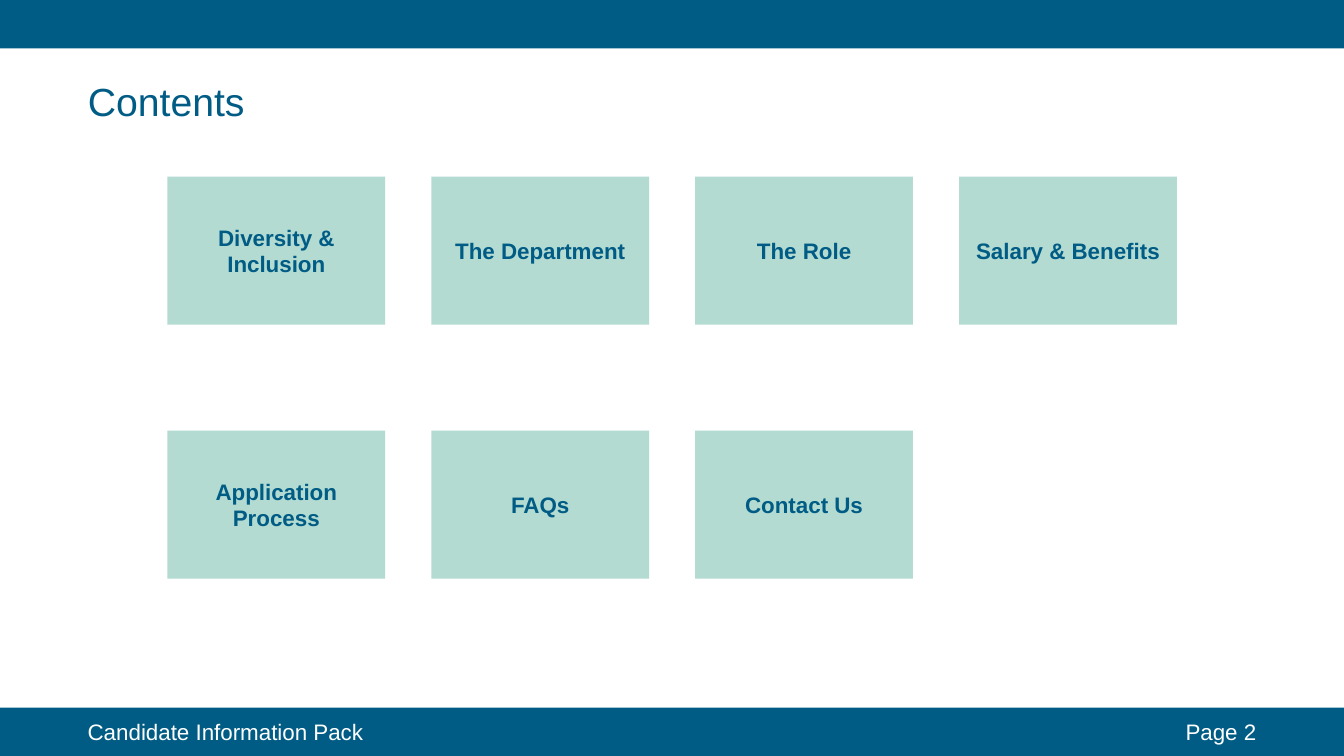
from dataclasses import dataclass

from pptx import Presentation
from pptx import util as u
from pptx.dml.color import RGBColor
from pptx.enum import shapes, text
from pptx.slide import Slide
from pptx.text.text import TextFrame

COLOURS = {"navy": "005C84", "mint": "B3DBD2", "white": "FFFFFF"}
FONT = "Arial"

SLIDE_WIDTH, SLIDE_HEIGHT = 33.87, 19.05
BAR_HEIGHT = 1.22

# Tile grid, in centimetres
GRID_LEFT, GRID_TOP = 4.22, 4.45
TILE_WIDTH, TILE_HEIGHT = 5.49, 3.73
COLUMN_PITCH, ROW_PITCH = 6.65, 6.4

TILE_ROWS = [
    ["Diversity & Inclusion", "The Department", "The Role", "Salary & Benefits"],
    ["Application Process", "FAQs", "Contact Us"],
]


@dataclass(frozen=True)
class Box:
    left: float
    top: float
    width: float
    height: float

    def lengths(self) -> tuple[u.Length, ...]:
        return tuple(u.Cm(n) for n in (self.left, self.top, self.width, self.height))


@dataclass(frozen=True)
class FooterLabel:
    wording: str
    box: Box
    alignment: text.PP_ALIGN


FOOTER_LABELS = [
    FooterLabel("Candidate Information Pack", Box(1.96, 17.96, 8.33, 0.94), text.PP_ALIGN.LEFT),
    FooterLabel("Page 2", Box(28.91, 17.96, 3, 0.94), text.PP_ALIGN.RIGHT),
]


def write_text(frame: TextFrame, wording: str, size: int, colour: str,
               alignment: text.PP_ALIGN, bold: bool = False) -> None:
    paragraph = frame.paragraphs[0]
    paragraph.alignment = alignment
    run = paragraph.add_run()
    run.text = wording
    run.font.name = FONT
    run.font.size = u.Pt(size)
    run.font.bold = bold
    run.font.color.rgb = RGBColor.from_string(COLOURS[colour])


def add_block(slide: Slide, box: Box, colour: str, label: str = "") -> None:
    shape = slide.shapes.add_shape(shapes.MSO_SHAPE.RECTANGLE, *box.lengths())
    shape.shadow.inherit = False
    shape.fill.solid()
    shape.fill.fore_color.rgb = RGBColor.from_string(COLOURS[colour])
    shape.line.fill.background()
    if label:
        shape.text_frame.word_wrap = True
        shape.text_frame.vertical_anchor = text.MSO_ANCHOR.MIDDLE
        write_text(shape.text_frame, label, 16, "navy", text.PP_ALIGN.CENTER, bold=True)


def add_title(slide: Slide, wording: str, box: Box) -> None:
    title = slide.shapes.title
    title.left, title.top, title.width, title.height = box.lengths()
    frame = title.text_frame
    frame.word_wrap = False
    frame.auto_size = text.MSO_AUTO_SIZE.SHAPE_TO_FIT_TEXT
    frame.vertical_anchor = text.MSO_ANCHOR.TOP
    write_text(frame, wording, 28, "navy", text.PP_ALIGN.LEFT)


def add_footer_label(slide: Slide, label: FooterLabel) -> None:
    frame = slide.shapes.add_textbox(*label.box.lengths()).text_frame
    frame.word_wrap = True
    frame.auto_size = text.MSO_AUTO_SIZE.SHAPE_TO_FIT_TEXT
    write_text(frame, label.wording, 16, "white", label.alignment)


def main() -> None:
    presentation = Presentation()
    presentation.slide_width = u.Cm(SLIDE_WIDTH)
    presentation.slide_height = u.Cm(SLIDE_HEIGHT)
    slide = presentation.slides.add_slide(presentation.slide_layouts.get_by_name("Title Only"))

    # Contents tiles
    for row, labels in enumerate(TILE_ROWS):
        for column, label in enumerate(labels):
            box = Box(GRID_LEFT + column * COLUMN_PITCH, GRID_TOP + row * ROW_PITCH,
                      TILE_WIDTH, TILE_HEIGHT)
            add_block(slide, box, "mint", label)

    # Top and bottom bars
    for top in (0, SLIDE_HEIGHT - BAR_HEIGHT):
        add_block(slide, Box(0, top, SLIDE_WIDTH, BAR_HEIGHT), "navy")

    # Heading and footer
    add_title(slide, "Contents", Box(1.96, 1.83, 4.52, 1.45))
    for footer_label in FOOTER_LABELS:
        add_footer_label(slide, footer_label)

    presentation.save("out.pptx")


if __name__ == "__main__":
    main()
